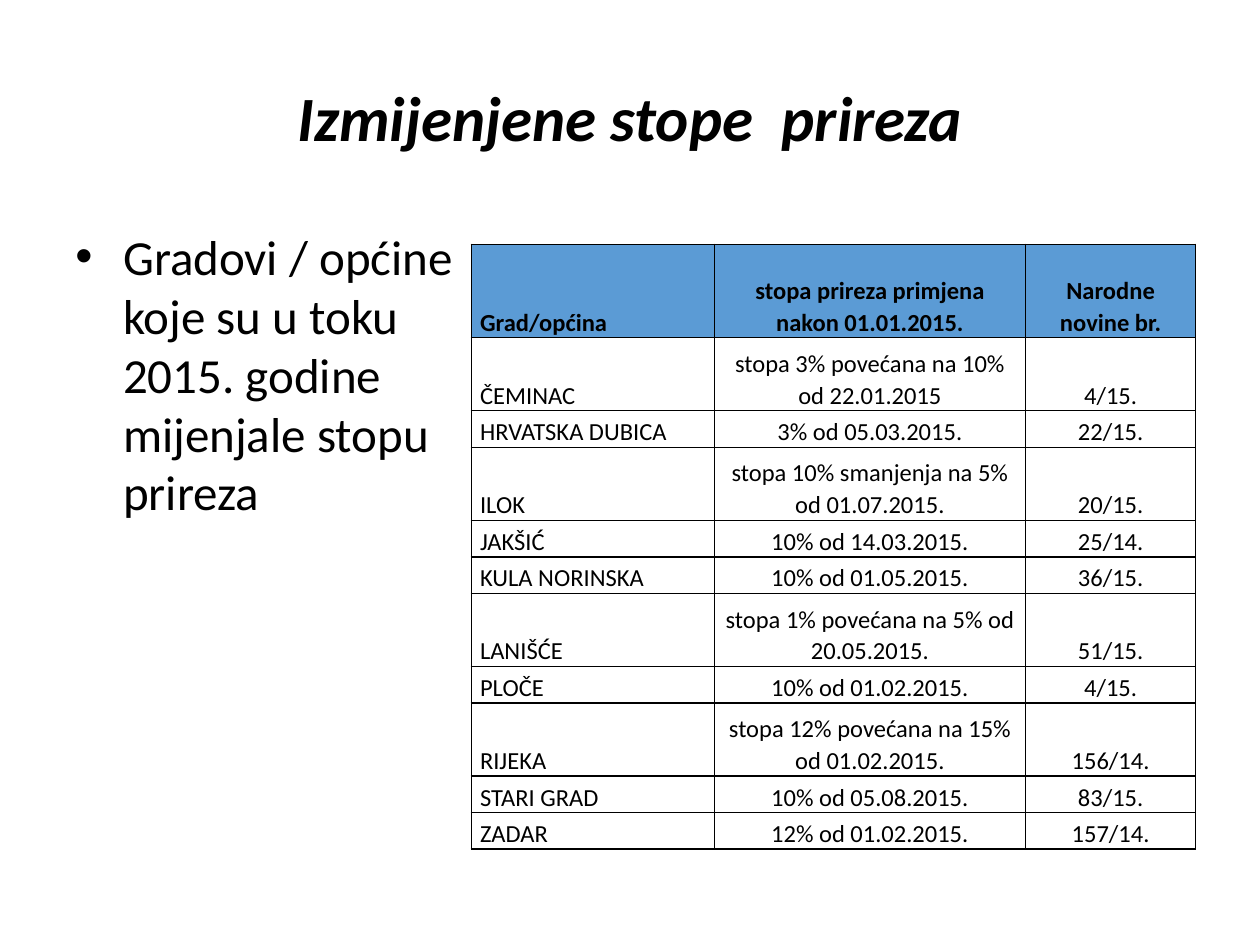
from pptx import Presentation
from pptx.dml.color import RGBColor
from pptx.enum.text import MSO_ANCHOR as Anchor, PP_ALIGN as Align
from pptx.oxml.ns import qn
from pptx.util import Inches, Pt
from lxml.etree import SubElement

COLORS = {"text": "000000", "header": "5B9BD5", "border": "000000"}
FONT = "Calibri"

# Content
TITLE = "Izmijenjene stope  prireza"
BULLET = "Gradovi / općine koje su u toku 2015. godine mijenjale stopu prireza"
HEADER = ("Grad/općina", "stopa prireza primjena nakon 01.01.2015.", "Narodne novine br.")
RATES = [
    ("ČEMINAC", "stopa 3% povećana na 10% od 22.01.2015", "4/15."),
    ("HRVATSKA DUBICA", "3% od 05.03.2015.", "22/15."),
    ("ILOK", "stopa 10% smanjenja na 5% od 01.07.2015.", "20/15."),
    ("JAKŠIĆ", "10% od 14.03.2015.", "25/14."),
    ("KULA NORINSKA", "10% od 01.05.2015.", "36/15."),
    ("LANIŠĆE", "stopa 1% povećana na 5% od 20.05.2015.", "51/15."),
    ("PLOČE", "10% od 01.02.2015.", "4/15."),
    ("RIJEKA", "stopa 12% povećana na 15% od 01.02.2015.", "156/14."),
    ("STARI GRAD", "10% od 05.08.2015.", "83/15."),
    ("ZADAR", "12% od 01.02.2015.", "157/14."),
]
COLUMN_WIDTHS = (1.93, 2.47, 1.35)
HEADER_HEIGHT, LINE_HEIGHT = 0.74, 0.29
LINE_LENGTH = 30  # characters that fit on one line of the rate column


def write_text(frame, text, size, align=Align.LEFT, anchor=Anchor.TOP,
               bold=False, italic=False, spacing=None, bullet=None):
    frame.word_wrap = True
    frame.vertical_anchor = anchor
    para = frame.paragraphs[0]
    para.alignment = align
    if spacing:
        para.line_spacing = spacing
    if bullet:
        props = para._p.get_or_add_pPr()
        props.set("marL", str(Inches(0.38)))
        props.set("indent", str(Inches(-0.38)))
        SubElement(props, qn("a:buFont"), typeface="Arial")
        SubElement(props, qn("a:buChar"), char=bullet)
    span = para.add_run()
    span.text = text
    font = span.font
    font.name, font.size, font.bold, font.italic = FONT, Pt(size), bold, italic
    font.color.rgb = RGBColor.from_string(COLORS["text"])


def add_borders(cell):
    props = cell._tc.get_or_add_tcPr()
    for index, side in enumerate(("a:lnL", "a:lnR", "a:lnT", "a:lnB")):
        line = SubElement(props, qn(side), w=str(Pt(1)))
        fill = SubElement(line, qn("a:solidFill"))
        SubElement(fill, qn("a:srgbClr"), val=COLORS["border"])
        props.insert(index, line)  # borders come before the cell fill


deck = Presentation()
deck.slide_width, deck.slide_height = Inches(10), Inches(7.5)
page = deck.slides.add_slide(deck.slide_layouts[5])

# Title
title = page.shapes.title
title.left, title.top = Inches(0.5), Inches(0.3)
title.width, title.height = Inches(9), Inches(1.25)
write_text(title.text_frame, TITLE, 36, Align.CENTER, Anchor.MIDDLE, bold=True, italic=True)

# Bullet text
box = page.shapes.add_textbox(Inches(0.5), Inches(1.75), Inches(3.24), Inches(3.73))
write_text(box.text_frame, BULLET, 28, bullet="•")

# Table of rates
rows = [HEADER] + RATES
heights = [HEADER_HEIGHT] + [
    LINE_HEIGHT * (2 if len(rate) > LINE_LENGTH else 1) for _, rate, _ in RATES]
table = page.shapes.add_table(
    len(rows), len(HEADER), Inches(3.74), Inches(1.94),
    Inches(sum(COLUMN_WIDTHS)), Inches(sum(heights))).table
for column, width in zip(table.columns, COLUMN_WIDTHS):
    column.width = Inches(width)
for row_index, (values, height) in enumerate(zip(rows, heights)):
    table.rows[row_index].height = Inches(height)
    is_header = row_index == 0
    for column_index, value in enumerate(values):
        cell = table.cell(row_index, column_index)
        cell.margin_left = cell.margin_right = Inches(0.07)
        cell.margin_top = cell.margin_bottom = 0
        cell.vertical_anchor = Anchor.BOTTOM
        if is_header:
            cell.fill.solid()
            cell.fill.fore_color.rgb = RGBColor.from_string(COLORS["header"])
        else:
            cell.fill.background()
        add_borders(cell)
        write_text(cell.text_frame, value, 14,
                   Align.CENTER if column_index else Align.LEFT,
                   anchor=None, bold=is_header, spacing=1.07)

deck.save("out.pptx")
